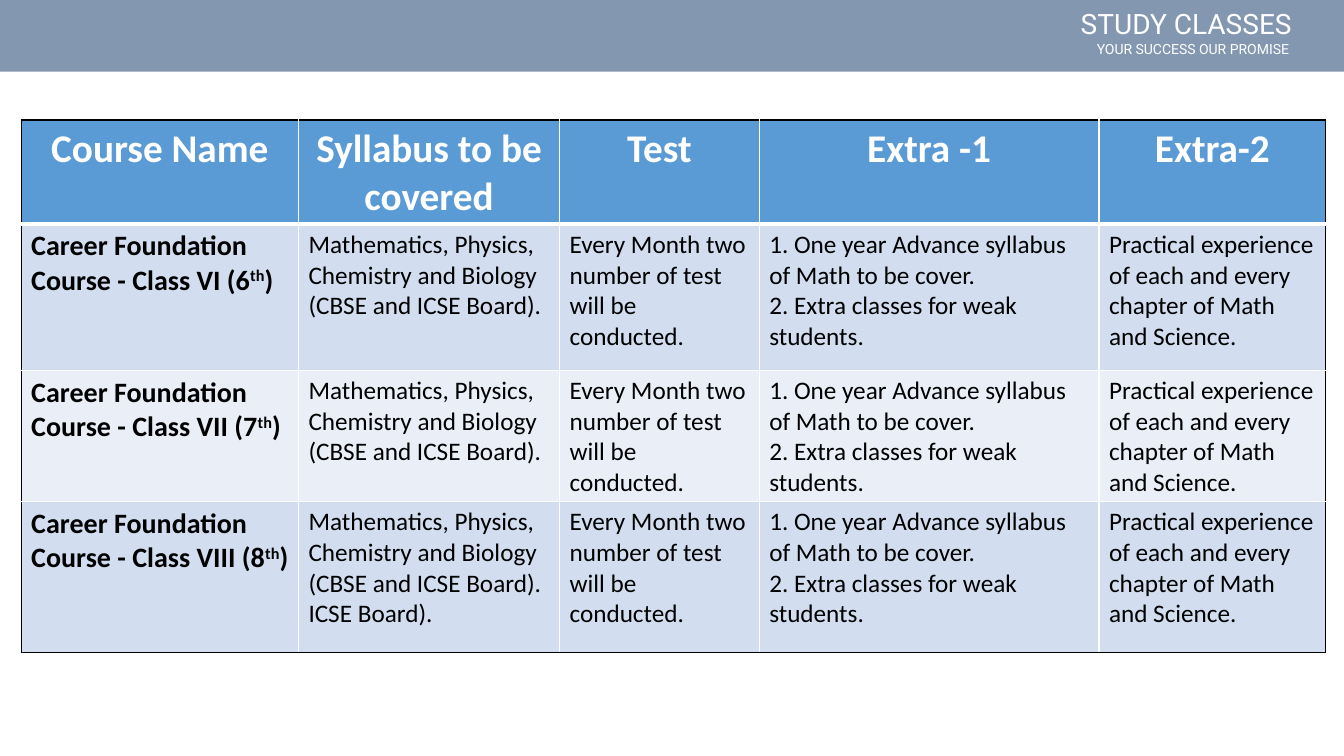
from dataclasses import dataclass

from lxml.etree import SubElement
from pptx import Presentation
from pptx.dml.color import RGBColor
from pptx.enum.shapes import MSO_SHAPE as Shape
from pptx.enum.text import PP_ALIGN as Align
from pptx.oxml import parse_xml
from pptx.oxml.ns import nsdecls, qn
from pptx.util import Inches, Pt

# Content
BANNER_LINES = [  # text, size name, left, top, width, height
    ("STUDY CLASSES", "brand_size", 10.62, 0.02, 3.08, 0.44),
    ("YOUR SUCCESS OUR PROMISE", "motto_size", 10.78, 0.35, 2.76, 0.27),
]
HEADINGS = ["Course Name", "Syllabus to be covered", "Test", "Extra -1", "Extra-2"]
CLASSES = [("VI", 6), ("VII", 7), ("VIII", 8)]
SYLLABUS = "Mathematics, Physics, Chemistry and Biology (CBSE and ICSE Board)."
SYLLABUS_ENDINGS = {"VIII": "\nICSE Board)."}
SHARED_DETAILS = [
    "Every Month two number of test will be conducted.",
    "1. One year Advance syllabus of Math to be cover.\n"
    "2. Extra classes for weak students.",
    "Practical experience of each and every chapter of Math and Science.",
]

# Layout, in inches
SLIDE_SIZE = (13.33, 7.5)
BANNER_HEIGHT = 0.71
TABLE_LEFT, TABLE_TOP = 0.21, 1.19
COLUMN_WIDTHS = [2.75, 2.59, 1.98, 3.37, 2.25]
ROW_HEIGHTS = [0.66, 1.45, 1.22, 1.5]


@dataclass(frozen=True)
class Theme:
    banner: str = "8497B0"
    heading: str = "5B9BD5"
    bands: tuple = ("D2DEEF", "EAEFF7")
    light: str = "FFFFFF"
    dark: str = "000000"
    banner_font: str = "Roboto"
    table_font: str = "Calibri"
    brand_size: int = 20
    motto_size: int = 10
    heading_size: int = 28
    course_size: int = 20
    detail_size: int = 18
    thin: int = 1
    thick: int = 3


THEME = Theme()


def color(value):
    return RGBColor.from_string(value)


def style_span(span, font, size, ink, bold=False):
    span.font.name = font
    span.font.size = Pt(size)
    span.font.color.rgb = color(ink)
    span.font.bold = bold


def add_banner(page):
    band = page.shapes.add_shape(
        Shape.RECTANGLE, 0, 0, Inches(SLIDE_SIZE[0]), Inches(BANNER_HEIGHT))
    band.shadow.inherit = False
    band.fill.solid()
    band.fill.fore_color.rgb = color(THEME.banner)
    band.line.fill.background()
    for text, size_name, *place in BANNER_LINES:
        box = page.shapes.add_textbox(*map(Inches, place))
        box.text_frame.word_wrap = True
        box.text_frame.text = text
        span = box.text_frame.paragraphs[0].runs[0]
        style_span(span, THEME.banner_font, getattr(THEME, size_name), THEME.light)


def set_borders(cell, borders):
    """Put (color, points) lines on the left, right, top and bottom, in that order."""
    properties = cell._tc.get_or_add_tcPr()
    for place, (side, (ink, points)) in enumerate(zip("LRTB", borders)):
        line = parse_xml(f'<a:ln{side} {nsdecls("a")} w="{Pt(points)}"/>')
        fill = SubElement(line, qn("a:solidFill"))
        SubElement(fill, qn("a:srgbClr"), val=ink)
        properties.insert(place, line)


def cell_borders(row, column):
    last_row, last_column = len(ROW_HEIGHTS) - 1, len(COLUMN_WIDTHS) - 1
    outer = [column == 0, column == last_column, row == 0, row == last_row]
    weights = [THEME.thin, THEME.thin,
               THEME.thick if row == 1 else THEME.thin,
               THEME.thick if row == 0 else THEME.thin]
    return [(THEME.dark if edge else THEME.light, weight)
            for edge, weight in zip(outer, weights)]


def fill_text(cell, row, column, text):
    if row == 0:
        size, ink = THEME.heading_size, THEME.light
    else:
        size = THEME.detail_size if column else THEME.course_size
        ink = THEME.dark
    cell.text_frame.text = text
    if row and column == 0:
        # Raise the ordinal ending of the class number
        para = cell.text_frame.paragraphs[0]
        for piece in ("th", ")"):
            para.add_run().text = piece
        para.runs[1]._r.get_or_add_rPr().set("baseline", "30000")
    for para in cell.text_frame.paragraphs:
        para.alignment = Align.LEFT if row else Align.CENTER
        for span in para.runs:
            style_span(span, THEME.table_font, size, ink, row == 0 or column == 0)


def add_course_table(page):
    rows = [HEADINGS] + [
        [f"Career Foundation Course - Class {numeral} ({number}",
         SYLLABUS + SYLLABUS_ENDINGS.get(numeral, ""), *SHARED_DETAILS]
        for numeral, number in CLASSES]
    frame = page.shapes.add_table(
        len(rows), len(HEADINGS), Inches(TABLE_LEFT), Inches(TABLE_TOP),
        Inches(sum(COLUMN_WIDTHS)), Inches(sum(ROW_HEIGHTS)))
    table = frame.table
    table.first_row = table.horz_banding = False
    for column, width in zip(table.columns, COLUMN_WIDTHS):
        column.width = Inches(width)
    for row, height in zip(table.rows, ROW_HEIGHTS):
        row.height = Inches(height)
    for row, texts in enumerate(rows):
        for column, text in enumerate(texts):
            cell = table.cell(row, column)
            fill_text(cell, row, column, text)
            cell.fill.solid()
            cell.fill.fore_color.rgb = color(
                THEME.bands[(row - 1) % 2] if row else THEME.heading)
            set_borders(cell, cell_borders(row, column))


def main():
    deck = Presentation()
    deck.slide_width, deck.slide_height = map(Inches, SLIDE_SIZE)
    page = deck.slides.add_slide(deck.slide_layouts[6])
    add_banner(page)
    add_course_table(page)
    deck.save("out.pptx")


if __name__ == "__main__":
    main()
